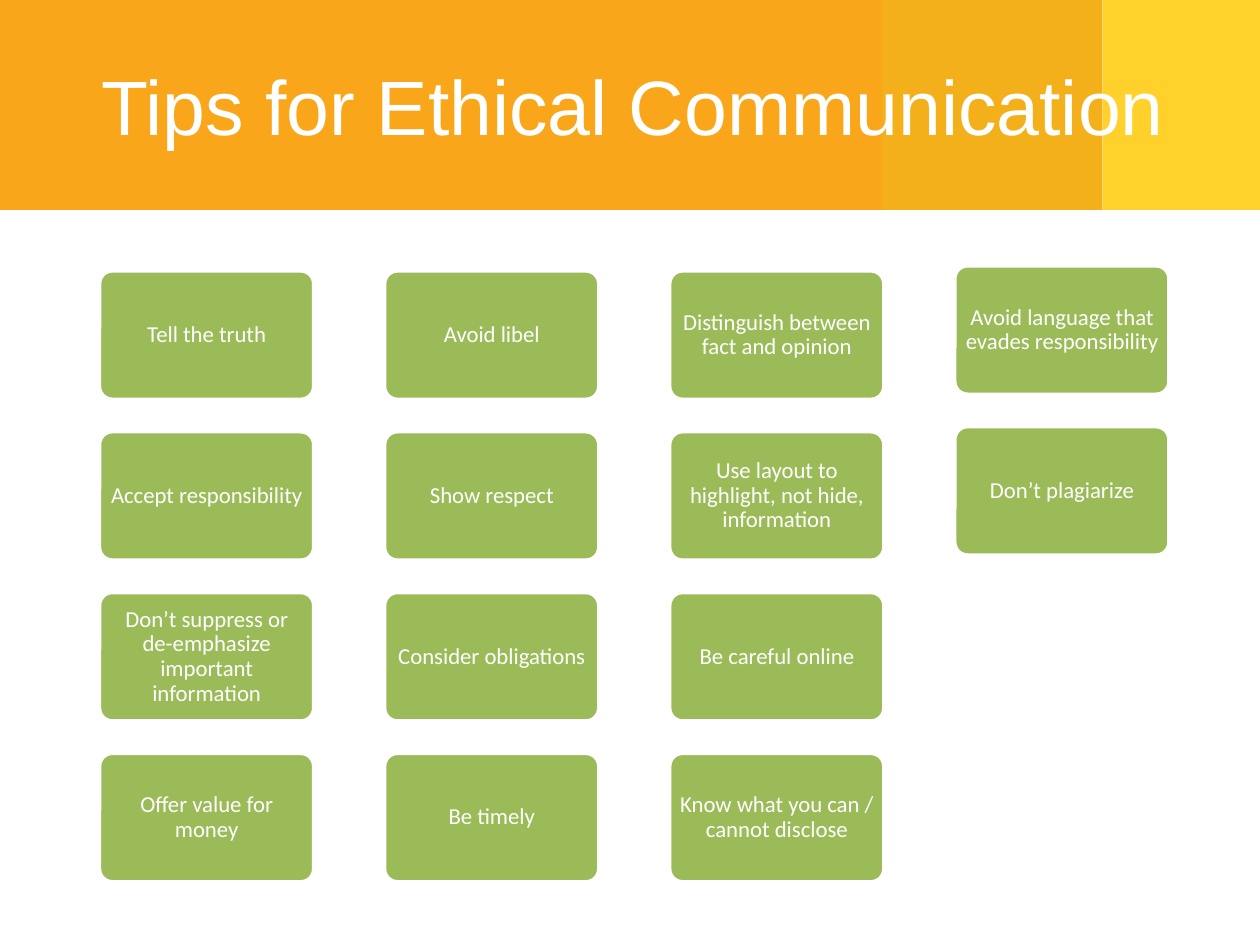
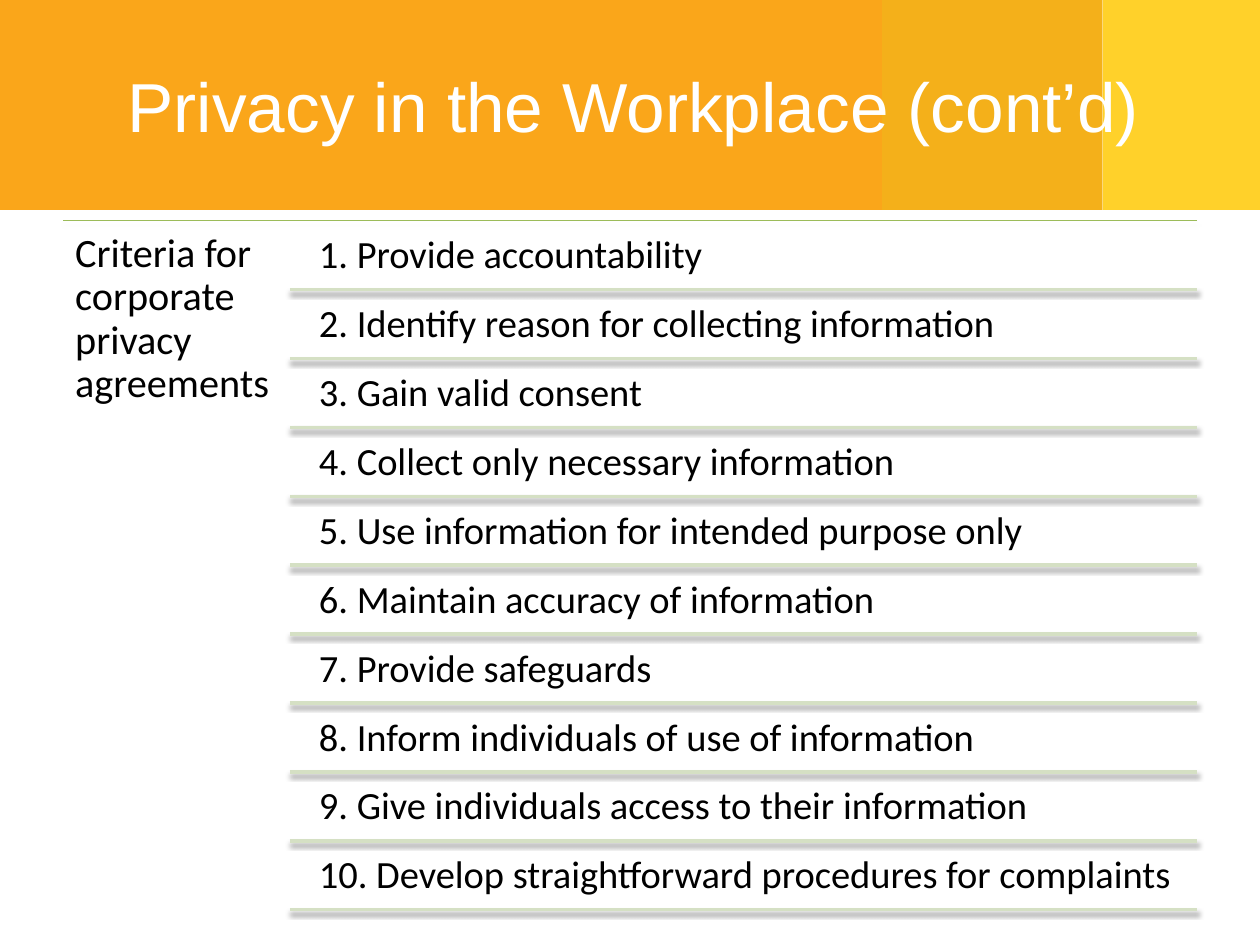
from dataclasses import dataclass

from lxml.etree import SubElement
from pptx import Presentation
from pptx.dml.color import RGBColor
from pptx.enum.shapes import MSO_CONNECTOR, MSO_SHAPE
from pptx.enum.text import MSO_ANCHOR, MSO_AUTO_SIZE, PP_ALIGN
from pptx.oxml.ns import qn
from pptx.util import Pt

WHITE, BLACK, GREEN, PALE_GREEN = "FFFFFF", "000000", "9BBB59", "D5E0C4"
TITLE_FONT, BODY_FONT = "Arial", "Calibri"


@dataclass(frozen=True)
class Band:
    left: float
    width: float
    color: str


@dataclass(frozen=True)
class TipColumn:
    top: float
    tips: tuple[str, ...]


@dataclass(frozen=True)
class Rule:
    left: float
    color: str
    weight: float
    shadow_percent: int
    shadow_distance: float


# Shared header: bands live on the layout, titles on each slide
BAND_HEIGHT = 120
BANDS = (Band(630, 90, "FFD12A"), Band(504, 126, "F4B01A"), Band(0, 504, "FAA61A"))

# Tip grid
GRID_LEFT, COLUMN_PITCH, ROW_PITCH = 56.9, 162.9, 91.9
TIP_WIDTH, TIP_HEIGHT = 122.4, 73.4
TIP_COLUMNS = (
    TipColumn(154.8, ("Tell the truth", "Accept responsibility",
                      "Don’t suppress or de-emphasize important information",
                      "Offer value for money")),
    TipColumn(154.8, ("Avoid libel", "Show respect", "Consider obligations", "Be timely")),
    TipColumn(154.8, ("Distinguish between fact and opinion",
                      "Use layout to highlight, not hide, information",
                      "Be careful online", "Know what you can / cannot disclose")),
    TipColumn(151.9, ("Avoid language that evades responsibility", "Don’t plagiarize")),
)

# Privacy criteria list
LIST_TOP, LIST_RIGHT = 126, 684
CRITERION_TOP, CRITERION_HEIGHT, CRITERION_PITCH = 128, 37.5, 39.37
TOP_RULE = Rule(36, GREEN, 0.75, 35, 1.8)
CRITERION_RULE = Rule(165.6, PALE_GREEN, 2, 38, 1.6)
CRITERIA = (
    "Provide accountability",
    "Identify reason for collecting information",
    "Gain valid consent",
    "Collect only necessary information",
    "Use information for intended purpose only",
    "Maintain accuracy of information",
    "Provide safeguards",
    "Inform individuals of use of information",
    "Give individuals access to their information",
    "Develop straightforward procedures for complaints",
)


def rgb(color: str) -> RGBColor:
    return RGBColor.from_string(color)


def set_text(shape, text: str, size: float, color: str, inset: float, font=BODY_FONT,
             align=PP_ALIGN.LEFT, anchor=MSO_ANCHOR.TOP, spacing=0.9) -> None:
    frame = shape.text_frame
    frame.text = text
    frame.word_wrap = True
    frame.auto_size = MSO_AUTO_SIZE.NONE
    frame.vertical_anchor = anchor
    frame.margin_left = frame.margin_right = Pt(inset)
    frame.margin_top = frame.margin_bottom = Pt(inset)
    paragraph = frame.paragraphs[0]
    paragraph.alignment = align
    paragraph.line_spacing = spacing
    paragraph.font.name = font
    paragraph.font.size = Pt(size)
    paragraph.font.color.rgb = rgb(color)


def add_filled(slide, kind, left: float, top: float, width: float, height: float, color: str):
    shape = slide.shapes.add_shape(kind, Pt(left), Pt(top), Pt(width), Pt(height))
    shape.shadow.inherit = False
    shape.fill.solid()
    shape.fill.fore_color.rgb = rgb(color)
    shape.line.fill.background()
    return shape


def move_bands_to_layout(slide, layout) -> None:
    for band in BANDS:
        rectangle = add_filled(slide, MSO_SHAPE.RECTANGLE, band.left, 0, band.width,
                               BAND_HEIGHT, band.color)
        layout.shapes.element.append(rectangle.element)


def set_title(slide, text: str, size: float) -> None:
    title = slide.shapes.title
    title.left, title.top, title.width, title.height = Pt(38), Pt(18), Pt(648), Pt(84)
    set_text(title, text, size, WHITE, 3.6, TITLE_FONT, PP_ALIGN.CENTER,
             MSO_ANCHOR.MIDDLE, 1.0)


def add_tip(slide, left: float, top: float, text: str) -> None:
    tip = add_filled(slide, MSO_SHAPE.ROUNDED_RECTANGLE, left, top, TIP_WIDTH,
                     TIP_HEIGHT, GREEN)
    tip.adjustments[0] = 0.1
    tip.line.color.rgb = rgb(WHITE)
    tip.line.width = Pt(2)
    set_text(tip, text, 13, WHITE, 3.6, align=PP_ALIGN.CENTER, anchor=MSO_ANCHOR.MIDDLE)


def add_list_text(slide, left: float, top: float, width: float, height: float,
                  text: str, size: float, inset: float) -> None:
    box = slide.shapes.add_textbox(Pt(left), Pt(top), Pt(width), Pt(height))
    set_text(box, text, size, BLACK, inset)


def add_rule(slide, rule: Rule, top: float) -> None:
    line = slide.shapes.add_connector(MSO_CONNECTOR.STRAIGHT, Pt(rule.left), Pt(top),
                                      Pt(LIST_RIGHT), Pt(top))
    line.line.color.rgb = rgb(rule.color)
    line.line.width = Pt(rule.weight)
    # Soft shadow straight below the line
    effects = SubElement(line.element.spPr, qn("a:effectLst"))
    shadow = SubElement(effects, qn("a:outerShdw"), blurRad=str(Pt(3.1)),
                        dist=str(Pt(rule.shadow_distance)), dir="5400000", rotWithShape="0")
    shade = SubElement(shadow, qn("a:srgbClr"), val=BLACK)
    SubElement(shade, qn("a:alpha"), val=str(rule.shadow_percent * 1000))


def fill_tips_slide(slide) -> None:
    set_title(slide, "Tips for Ethical Communication", 44)
    for column_index, column in enumerate(TIP_COLUMNS):
        left = GRID_LEFT + column_index * COLUMN_PITCH
        for row_index, tip in enumerate(column.tips):
            add_tip(slide, left, column.top + row_index * ROW_PITCH, tip)


def fill_privacy_slide(slide) -> None:
    set_title(slide, "Privacy in the Workplace (cont’d)", 39.6)
    add_rule(slide, TOP_RULE, LIST_TOP)
    add_list_text(slide, 36, LIST_TOP, 129.6, 396,
                  "Criteria for corporate privacy agreements", 23, 7)
    for index, criterion in enumerate(CRITERIA):
        top = CRITERION_TOP + index * CRITERION_PITCH
        add_list_text(slide, 175.7, top, 509, CRITERION_HEIGHT,
                      f"{index + 1}. {criterion}", 22, 6.6)
        add_rule(slide, CRITERION_RULE, top + CRITERION_HEIGHT)


def main() -> None:
    presentation = Presentation()
    presentation.slide_width, presentation.slide_height = Pt(720), Pt(540)
    title_only = presentation.slide_layouts[5]
    tips_slide = presentation.slides.add_slide(title_only)
    privacy_slide = presentation.slides.add_slide(title_only)
    move_bands_to_layout(tips_slide, title_only)
    fill_tips_slide(tips_slide)
    fill_privacy_slide(privacy_slide)
    presentation.save("out.pptx")


if __name__ == "__main__":
    main()
